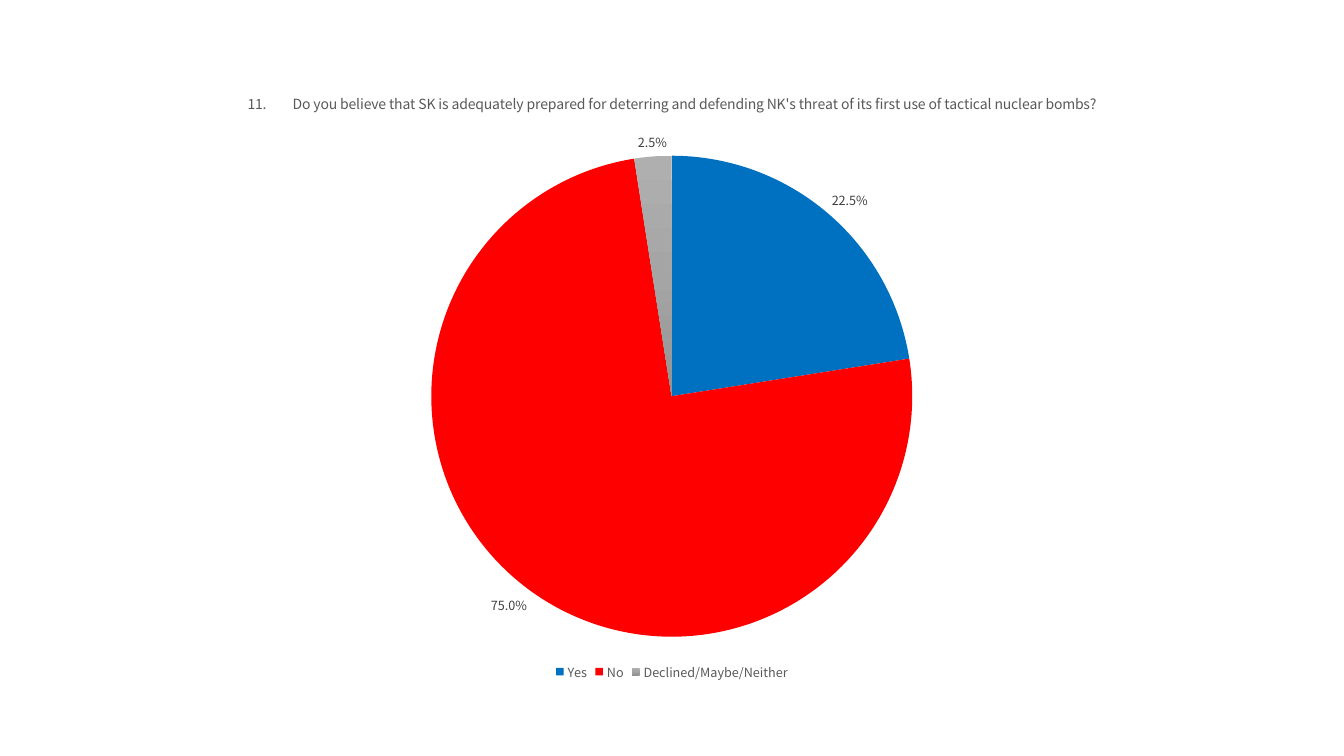
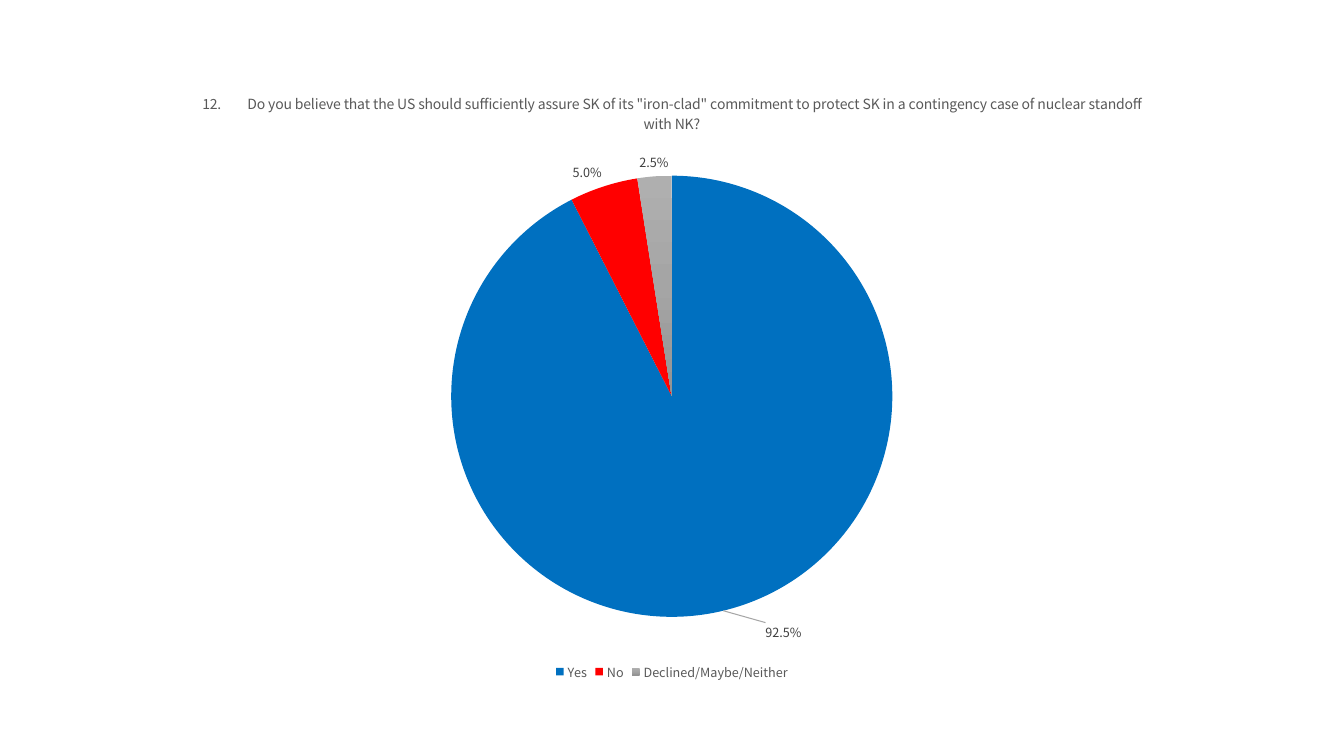
from copy import deepcopy

from pptx import Presentation
from pptx.chart.data import CategoryChartData as Data
from pptx.dml.color import RGBColor as Rgb
from pptx.enum.chart import XL_CHART_TYPE as Kind
from pptx.enum.chart import XL_LABEL_POSITION as Place
from pptx.enum.chart import XL_LEGEND_POSITION as Side
from pptx.oxml import parse_xml
from pptx.oxml.ns import nsdecls
from pptx.util import Cm, Pt


class Theme:
    font = "Noto Sans CJK KR"
    title = (10, "595959")
    legend = (9, "595959")
    label = (9, "404040")
    yes = "0070C0"
    no = "FF0000"
    other = ("AFAFAF", "A5A5A5", "939393")
    leader = "A6A6A6"
    gap = 900  # extra width after the question number, 1/100 pt


def style(font, look):
    size, color = look
    font.name = Theme.font
    font.size = Pt(size)
    font.bold = False
    font.color.rgb = Rgb.from_string(color)


def shift(label, dx, dy):
    """Move a data label by fractions of the chart's width and height."""
    label.position = Place.OUTSIDE_END
    style(label.font, Theme.label)
    node = label._dLbl
    node.find("{*}idx").addnext(parse_xml(
        f'<c:layout {nsdecls("c")}><c:manualLayout>'
        f'<c:x val="{dx}"/><c:y val="{dy}"/>'
        "</c:manualLayout></c:layout>"))
    node.getparent().append(parse_xml(
        f'<c:leaderLines {nsdecls("c", "a")}><c:spPr><a:ln w="9525">'
        f'<a:solidFill><a:srgbClr val="{Theme.leader}"/></a:solidFill>'
        "</a:ln></c:spPr></c:leaderLines>"))


answers = ("Yes", "No", "Declined/Maybe/Neither")
polls = [
    ("11.",
     "Do you believe that SK is adequately prepared for deterring and "
     "defending NK's threat of its first use of tactical nuclear bombs?",
     (0.225, 0.75, 0.025), None),
    ("12.",
     "Do you believe that the US should sufficiently assure SK of its "
     '"iron-clad" commitment to protect SK in a contingency case of '
     "nuclear standoff with NK?",
     (0.925, 0.05, 0.025), (0.034, 0.01)),
]

deck = Presentation()
deck.slide_width, deck.slide_height = Cm(33.87), Cm(19.05)

for number, question, shares, offset in polls:
    slide = deck.slides.add_slide(deck.slide_layouts[6])
    data = Data(number_format="0.0%")
    data.categories = answers
    data.add_series(question, shares)
    chart = slide.shapes.add_chart(
        Kind.PIE, Cm(1.78), Cm(1.78), Cm(30.3), Cm(15.47), data).chart
    chart.font.name = Theme.font
    chart.font.size = Pt(10)

    # Title
    chart.has_title = True
    line = chart.chart_title.text_frame.paragraphs[0]
    style(line.font, Theme.title)
    for text in (number, "\N{EM SPACE}", question):
        run = line.add_run()
        run.text = text
        style(run.font, Theme.title)
        if text.isspace():
            run._r.get_or_add_rPr().set("spc", str(Theme.gap))

    # Legend
    chart.has_legend = True
    chart.legend.position = Side.BOTTOM
    chart.legend.include_in_layout = False
    style(chart.legend.font, Theme.legend)

    # Slices
    plot = chart.plots[0]
    plot.vary_by_categories = True
    pie = plot.series[0]
    for index, color in enumerate((Theme.yes, Theme.no)):
        fill = pie.points[index].format.fill
        fill.solid()
        fill.fore_color.rgb = Rgb.from_string(color)
    fill = pie.points[2].format.fill
    fill.gradient()
    fill.gradient_angle = 270
    first = fill.gradient_stops[0]._gs
    first.addnext(deepcopy(first))
    for index, color in enumerate(Theme.other):
        stop = fill.gradient_stops[index]
        stop.position = index / 2
        stop.color.rgb = Rgb.from_string(color)

    # Labels
    labels = pie.data_labels
    labels.show_value = True
    labels.number_format = "0.0%"
    labels.number_format_is_linked = False
    labels.position = Place.OUTSIDE_END
    style(labels.font, Theme.label)
    if offset:
        shift(pie.points[0].data_label, *offset)

deck.save("out.pptx")
